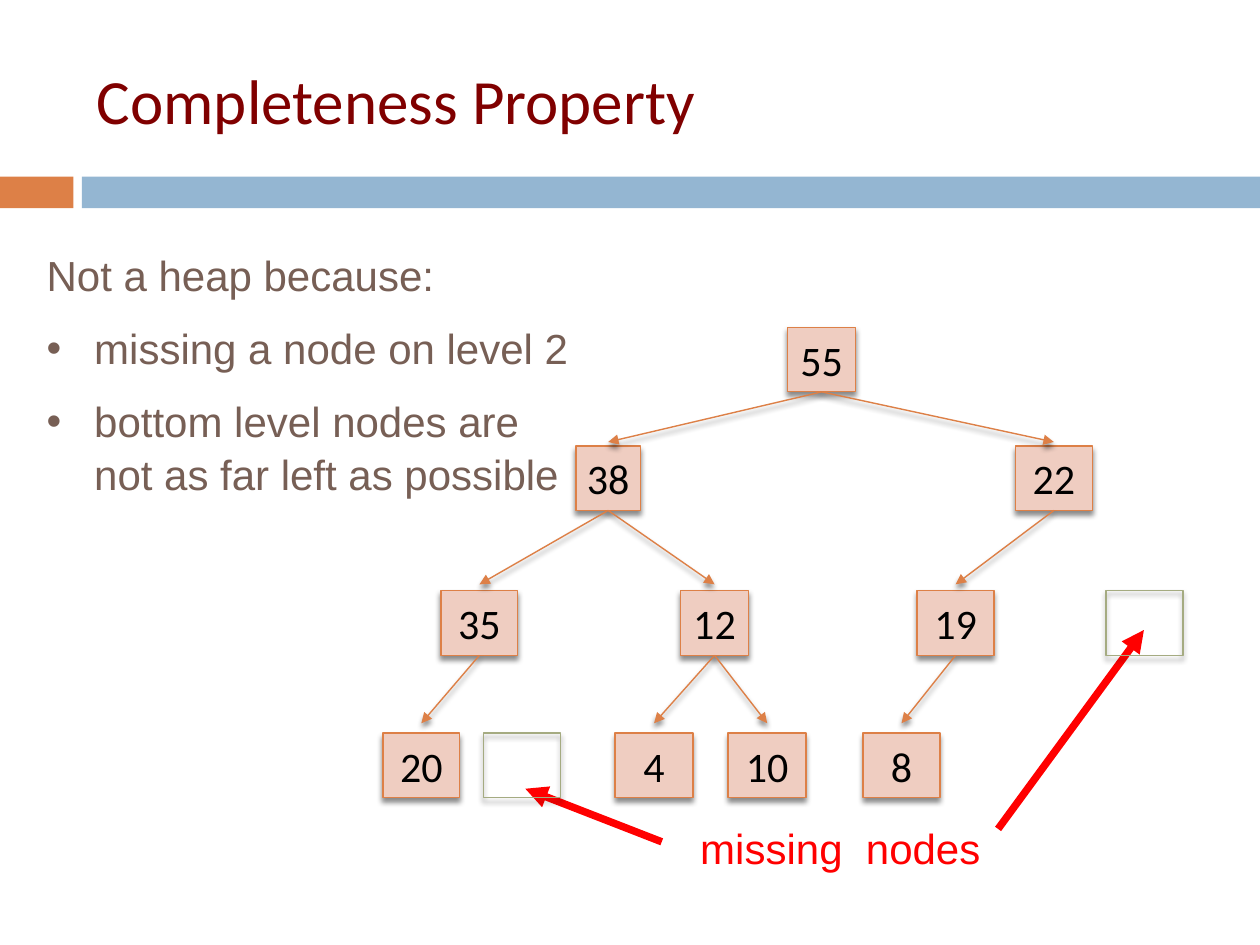
from lxml.etree import SubElement
from pptx import Presentation
from pptx.dml.color import RGBColor
from pptx.enum.shapes import MSO_CONNECTOR, MSO_SHAPE
from pptx.enum.text import MSO_ANCHOR, PP_ALIGN
from pptx.oxml.ns import qn
from pptx.util import Cm, Pt

ORANGE = RGBColor(0xDD, 0x80, 0x47)
BLUE = RGBColor(0x94, 0xB6, 0xD2)
PINK = RGBColor(0xEF, 0xCD, 0xC1)
GREEN = RGBColor(0xA5, 0xAB, 0x81)
BROWN = RGBColor(0x77, 0x5F, 0x55)
MAROON = RGBColor(0x80, 0x00, 0x00)
RED = RGBColor(0xFF, 0x00, 0x00)
BLACK = RGBColor(0x00, 0x00, 0x00)

BOTTOM = 2
NODE_HEIGHT = 1.3
ROW_TOPS = [6.6, 8.99, 11.91, 14.78]
ROW_GAPS = [0, 0.08, 0.13, 0.2]  # space between arrow tip and node

# value: (row, left, width, parent)
NODES = {
    "55": (0, 15.88, 1.37, None),
    "38": (1, 11.61, 1.3, "55"),
    "22": (1, 20.47, 1.55, "55"),
    "35": (2, 8.89, 1.55, "38"),
    "12": (2, 13.72, 1.37, "38"),
    "19": (2, 18.49, 1.55, "22"),
    "20": (3, 7.72, 1.55, "35"),
    "4": (3, 12.4, 1.57, "12"),
    "10": (3, 14.68, 1.57, "12"),
    "8": (3, 17.4, 1.55, "19"),
}
MISSING = [(3, 9.75), (2, 22.3)]  # row, left
POINTERS = [((13.34, 16.97), (10.59, 15.9)), ((20.12, 16.71), (23.06, 12.7))]


class SlideBuilder:
    def __init__(self, page):
        self.page = page

    def style_text(self, frame, color, size=24, font="Arial", align=PP_ALIGN.LEFT):
        for para in frame.paragraphs:
            para.alignment = align
            for span in para.runs:
                span.font.name = font
                span.font.size = Pt(size)
                span.font.color.rgb = color

    def set_effects(self, shape, shadow):
        """Give the shape a soft shadow below it, or none at all."""
        effects = SubElement(shape._element.spPr, qn("a:effectLst"))
        if shadow:
            outer = SubElement(effects, qn("a:outerShdw"), blurRad=str(Pt(3)),
                               dist=str(Pt(2.4)), dir="5400000", rotWithShape="0")
            color = SubElement(outer, qn("a:srgbClr"), val="000000")
            SubElement(color, qn("a:alpha"), val="45000")

    def title(self, text, left, top, width, height):
        title = self.page.shapes.title
        title.left, title.top = Cm(left), Cm(top)
        title.width, title.height = Cm(width), Cm(height)
        title.text_frame.text = text
        title.text_frame.vertical_anchor = MSO_ANCHOR.MIDDLE
        self.style_text(title.text_frame, MAROON, 36, "Calibri")

    def rectangle(self, left, top, width, height, fill=None, line=None):
        box = self.page.shapes.add_shape(
            MSO_SHAPE.RECTANGLE, Cm(left), Cm(top), Cm(width), Cm(height))
        if fill is None:
            box.fill.background()
        else:
            box.fill.solid()
            box.fill.fore_color.rgb = fill
        if line is None:
            box.line.fill.background()
        else:
            box.line.color.rgb = line
            box.line.width = Pt(0.79)
        self.set_effects(box, shadow=line is not None)
        return box

    def node(self, value, row, left, width):
        box = self.rectangle(left, ROW_TOPS[row], width, NODE_HEIGHT, PINK, ORANGE)
        frame = box.text_frame
        frame.margin_left = frame.margin_right = 0
        frame.margin_top = frame.margin_bottom = 0
        frame.vertical_anchor = MSO_ANCHOR.MIDDLE
        frame.text = value
        self.style_text(frame, BLACK, font="Calibri", align=PP_ALIGN.CENTER)
        return box

    def text_box(self, lines, left, top, width, height, color,
                 align=PP_ALIGN.LEFT, wrap=True):
        box = self.page.shapes.add_textbox(Cm(left), Cm(top), Cm(width), Cm(height))
        frame = box.text_frame
        frame.word_wrap = wrap
        frame.margin_left = frame.margin_right = Cm(0.1)
        frame.margin_top = frame.margin_bottom = 0
        frame.text = "\n".join(lines)
        for para in frame.paragraphs:
            para.space_before = Pt(11.5)
            para.line_spacing = 1.05
        self.style_text(frame, color, align=align)
        return box

    def add_bullet(self, para):
        properties = para._p.get_or_add_pPr()
        properties.set("marL", str(Cm(0.96)))
        properties.set("indent", str(Cm(-0.96)))
        SubElement(properties, qn("a:buFont"), typeface="Arial")
        SubElement(properties, qn("a:buChar"), char="•")

    def arrow(self, start, end, color, width, parent=None):
        """Draw an arrow; with a parent, start is its bottom middle."""
        line = self.page.shapes.add_connector(
            MSO_CONNECTOR.STRAIGHT, *map(Cm, start), *map(Cm, end))
        if parent is not None:
            line.begin_connect(parent, BOTTOM)
        line.line.color.rgb = color
        line.line.width = Pt(width)
        SubElement(line.line._get_or_add_ln(), qn("a:tailEnd"), type="triangle")
        self.set_effects(line, shadow=parent is not None)


def main():
    deck = Presentation()
    deck.slide_width, deck.slide_height = Cm(25.4), Cm(19.05)
    slide = SlideBuilder(deck.slides.add_slide(deck.slide_layouts[5]))

    slide.rectangle(0, 3.56, 1.48, 0.64, ORANGE)
    slide.rectangle(1.65, 3.56, 23.75, 0.64, BLUE)
    slide.title("Completeness Property", 1.7, 0.64, 22.66, 2.74)

    slide.text_box(["missing  nodes"], 13.97, 16.54, 5.94, 1.02, RED,
                   PP_ALIGN.CENTER, wrap=False)
    for start, end in POINTERS:
        slide.arrow(start, end, RED, 4.25)

    reasons = slide.text_box(
        ["Not a heap because:", "missing a node on level 2",
         "bottom level nodes are not as far left as possible"],
        0.84, 4.98, 10.85, 4.95, BROWN)
    for para in reasons.text_frame.paragraphs[1:]:
        slide.add_bullet(para)

    boxes = {value: slide.node(value, row, left, width)
             for value, (row, left, width, _) in NODES.items()}
    for row, left, width, parent in NODES.values():
        if parent:
            parent_row, parent_left, parent_width, _ = NODES[parent]
            start = (parent_left + parent_width / 2, ROW_TOPS[parent_row] + NODE_HEIGHT)
            tip = (left + width / 2, ROW_TOPS[row] - ROW_GAPS[row])
            slide.arrow(start, tip, ORANGE, 0.79, boxes[parent])
    for row, left in MISSING:
        slide.rectangle(left, ROW_TOPS[row], 1.55, NODE_HEIGHT, line=GREEN)

    deck.save("out.pptx")


if __name__ == "__main__":
    main()
